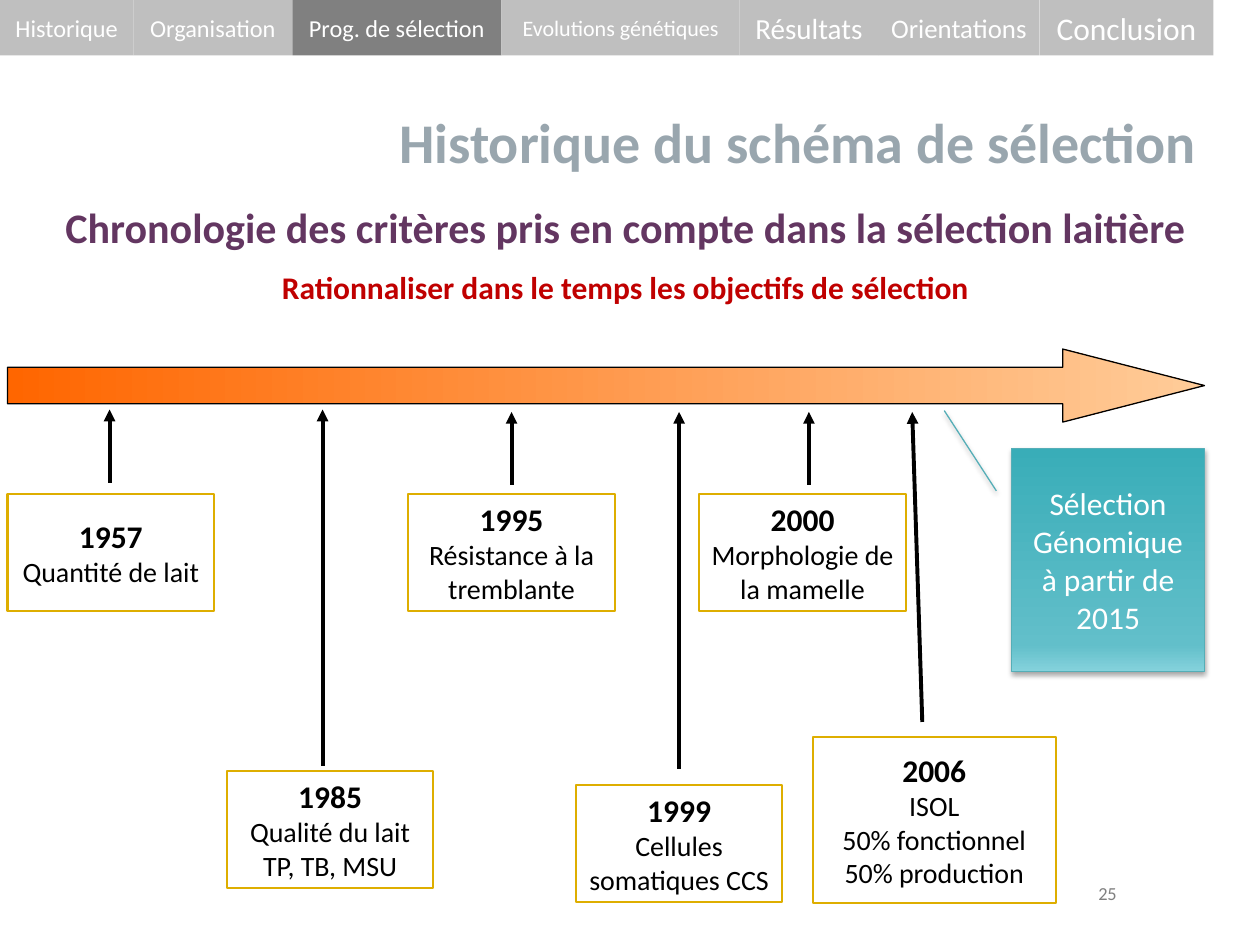
"""Build the dairy selection timeline slide."""
from copy import deepcopy
from typing import NamedTuple

from pptx import Presentation
from pptx.dml.color import RGBColor
from pptx.enum.shapes import MSO_CONNECTOR, MSO_SHAPE
from pptx.enum.text import MSO_ANCHOR as Anchor, PP_ALIGN as Align
from pptx.oxml import parse_xml
from pptx.oxml.ns import nsdecls, qn
from pptx.util import Inches, Pt

FONT = "Calibri"
WHITE = RGBColor(0xFF, 0xFF, 0xFF)
BLACK = RGBColor(0x00, 0x00, 0x00)
GREY = RGBColor(0x80, 0x80, 0x80)
LIGHT_GREY = RGBColor(0xBF, 0xBF, 0xBF)
SLATE = RGBColor(0x99, 0xA6, 0xAE)
PURPLE = RGBColor(0x63, 0x36, 0x61)
RED = RGBColor(0xC0, 0x00, 0x00)
GOLD = RGBColor(0xDE, 0xAE, 0x00)
ORANGE = RGBColor(0xFF, 0x66, 0x00)
PEACH = RGBColor(0xFF, 0xCC, 0x99)
TEAL = RGBColor(0x39, 0xAD, 0xB8)
MID_TEAL = RGBColor(0x62, 0xBF, 0xCA)
PALE_TEAL = RGBColor(0x85, 0xD2, 0xDC)
TEAL_LINE = RGBColor(0x55, 0xAE, 0xB7)


class Tab(NamedTuple):
    label: str
    width: float
    size: float
    fill: RGBColor = LIGHT_GREY


class Milestone(NamedTuple):
    year: str
    lines: list[str]
    left: float
    top: float
    width: float = 1.64
    height: float = 0.93


class Arrow(NamedTuple):
    tip_x: float
    tip_y: float
    end_x: float
    end_y: float


class Line(NamedTuple):
    text: str
    size: float
    color: RGBColor
    bold: bool = False
    before: float = 0


TABS = [
    Tab("Historique", 1.06, 13.9),
    Tab("Organisation", 1.26, 13.9),
    Tab("Prog. de sélection", 1.66, 13.9, GREY),
    Tab("Evolutions génétiques", 1.89, 12.6),
    Tab("Résultats", 1.1, 16.6),
    Tab("Orientations", 1.28, 15.3),
    Tab("Conclusion", 1.38, 18),
]
MILESTONES = [
    Milestone("1957", ["Quantité de lait"], 0.06, 3.92),
    Milestone("1985", ["Qualité du lait", "TP, TB, MSU"], 1.8, 6.12),
    Milestone("1995", ["Résistance à la tremblante"], 3.24, 3.92),
    Milestone("1999", ["Cellules somatiques CCS"], 4.57, 6.23),
    Milestone("2000", ["Morphologie de la mamelle"], 5.55, 3.92),
    Milestone("2006", ["ISOL", "50% fonctionnel", "50% production"], 6.45, 5.85, 1.93, 1.32),
]
ARROWS = [
    Arrow(0.87, 3.25, 0.87, 3.83),
    Arrow(2.56, 3.25, 2.56, 6.08),
    Arrow(4.06, 3.27, 4.06, 3.85),
    Arrow(5.39, 3.27, 5.39, 6.1),
    Arrow(6.42, 3.27, 6.42, 3.85),
    Arrow(7.24, 3.27, 7.32, 5.73),
]


def write(sp, lines: list[Line], align=Align.CENTER, anchor=Anchor.MIDDLE) -> None:
    tf = sp.text_frame
    tf.word_wrap = True
    tf.vertical_anchor = anchor
    tf.text = "\n".join(line.text for line in lines)
    for p, line in zip(tf.paragraphs, lines):
        p.alignment = align
        if line.before:
            p.space_before = Pt(line.before)
        font = p.runs[0].font
        font.name, font.size, font.bold = FONT, Pt(line.size), line.bold
        font.color.rgb = line.color


def add_shape(s, kind, left: float, top: float, width: float, height: float,
              fill=None, line=None, weight: float = 0.75):
    sp = s.shapes.add_shape(kind, Inches(left), Inches(top), Inches(width), Inches(height))
    sp.shadow.inherit = False
    if fill is not None:
        sp.fill.solid()
        sp.fill.fore_color.rgb = fill
    if line is None:
        sp.line.fill.background()
    else:
        sp.line.color.rgb = line
        sp.line.width = Pt(weight)
    return sp


def set_gradient(sp, angle: float, stops: list[tuple[float, RGBColor]]) -> None:
    sp.fill.gradient()
    sp.fill.gradient_angle = angle
    gs_list = sp.element.spPr.find(qn("a:gradFill")).find(qn("a:gsLst"))
    for _ in range(len(stops) - len(gs_list)):
        gs_list.append(deepcopy(gs_list[0]))
    for stop, (position, color) in zip(sp.fill.gradient_stops, stops):
        stop.position = position
        stop.color.rgb = color


def add_arrow(s, arrow: Arrow) -> None:
    cx = s.shapes.add_connector(MSO_CONNECTOR.STRAIGHT, *(Inches(v) for v in arrow))
    cx.line.color.rgb = BLACK
    cx.line.width = Pt(2.25)
    cx.line._get_or_add_ln().append(parse_xml(f'<a:headEnd {nsdecls("a")} type="triangle"/>'))
    cx.element.spPr.append(parse_xml(f'<a:effectLst {nsdecls("a")}/>'))


def add_tabs(s) -> None:
    left = 0
    for tab in TABS:
        sp = add_shape(s, MSO_SHAPE.RECTANGLE, left, 0, tab.width, 0.44, tab.fill)
        write(sp, [Line(tab.label, tab.size, WHITE)])
        left += tab.width


def add_milestone(s, m: Milestone) -> None:
    sp = add_shape(s, MSO_SHAPE.RECTANGLE, m.left, m.top, m.width, m.height, WHITE, GOLD, 1.25)
    sp.text_frame.margin_left = sp.text_frame.margin_right = Inches(0.08)
    write(sp, [Line(m.year, 18, BLACK, True)] + [Line(text, 16, BLACK) for text in m.lines])


def add_callout(s) -> None:
    sp = add_shape(s, MSO_SHAPE.LINE_CALLOUT_1, 8.03, 3.56, 1.53, 1.77, line=TEAL_LINE)
    for i, value in enumerate((0.19, -0.08, -0.17, -0.35)):
        sp.adjustments[i] = value
    set_gradient(sp, 90, [(0, PALE_TEAL), (0.12, MID_TEAL), (1, TEAL)])
    sp.element.spPr.find(qn("a:effectLst")).append(parse_xml(
        f'<a:outerShdw {nsdecls("a")} blurRad="{Pt(3.1)}" dist="{Pt(1.8)}" dir="5400000" '
        'rotWithShape="0"><a:srgbClr val="000000"><a:alpha val="35000"/></a:srgbClr></a:outerShdw>'))
    write(sp, [Line("Sélection Génomique à partir de 2015", 18, WHITE)])


def main() -> None:
    prs = Presentation()
    prs.slide_width, prs.slide_height = Inches(10), Inches(7.5)
    s = prs.slides.add_slide(prs.slide_layouts[5])

    title = s.shapes.title
    title.left, title.top = Inches(-0.02), Inches(0.44)
    title.width, title.height = Inches(9.62), Inches(1.36)
    write(title, [Line("Historique du schéma de sélection", 32, SLATE, True)], Align.RIGHT)

    band = add_shape(s, MSO_SHAPE.RIGHT_ARROW, 0.06, 2.77, 9.5, 0.58, line=BLACK)
    band.adjustments[0], band.adjustments[1] = 0.5, 1.94
    set_gradient(band, 0, [(0, ORANGE), (1, PEACH)])
    for arrow in ARROWS:
        add_arrow(s, arrow)

    subtitle = s.shapes.add_textbox(Inches(0.2), Inches(1.55), Inches(9.53), Inches(0.96))
    write(subtitle, [
        Line("Chronologie des critères pris en compte dans la sélection laitière", 24, PURPLE, True),
        Line("Rationnaliser dans le temps les objectifs de sélection", 18, RED, True, 9),
    ], anchor=Anchor.TOP)

    add_callout(s)
    add_tabs(s)
    for milestone in MILESTONES:
        add_milestone(s, milestone)

    number = s.shapes.add_textbox(Inches(8.5), Inches(7), Inches(0.58), Inches(0.17))
    number.text_frame.margin_top = number.text_frame.margin_bottom = 0
    write(number, [Line("25", 10.5, GREY)])
    prs.save("out.pptx")


if __name__ == "__main__":
    main()
